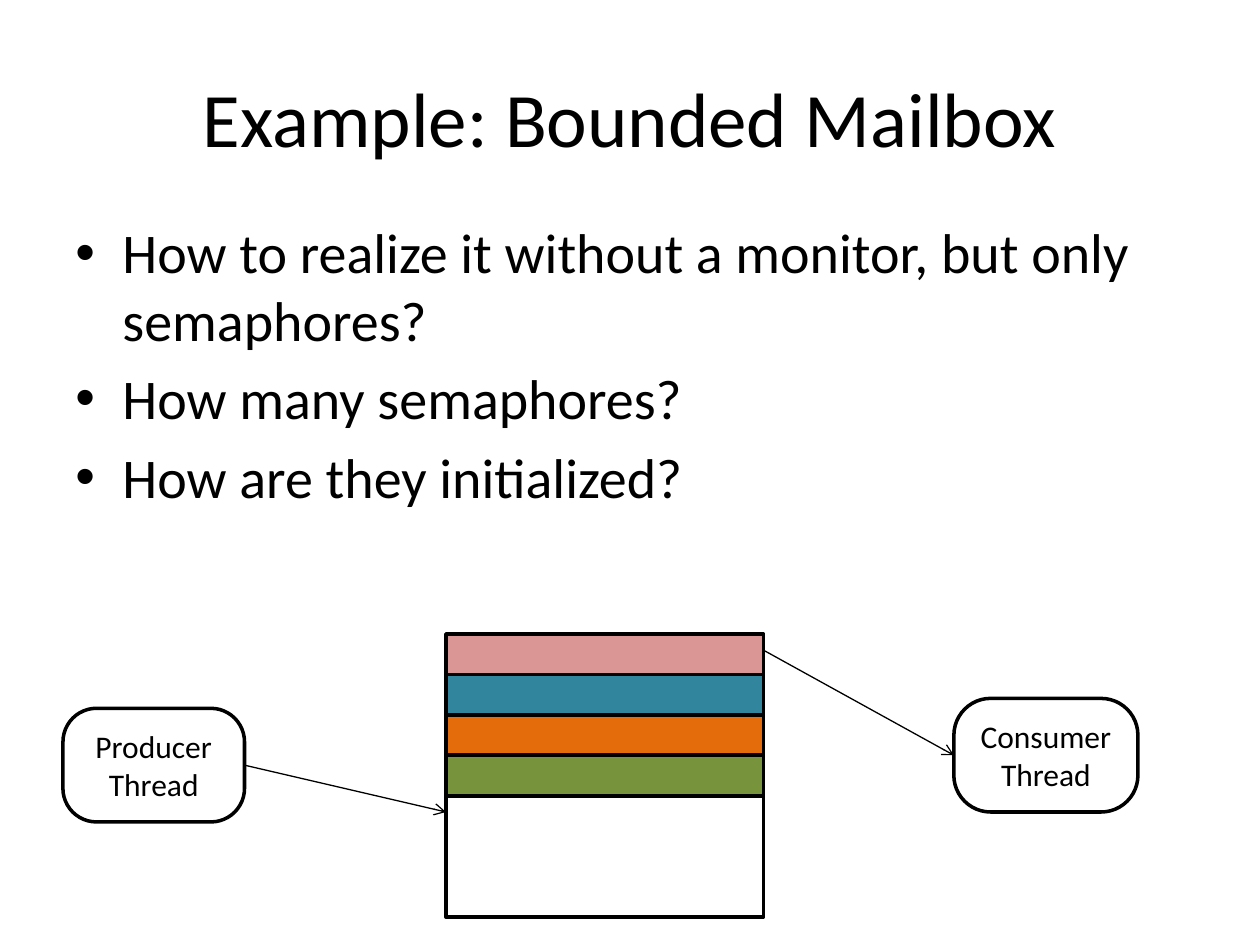
from lxml.etree import SubElement
from pptx import Presentation
from pptx.dml.color import RGBColor
from pptx.enum.shapes import MSO_CONNECTOR as Line, MSO_SHAPE as Kind
from pptx.enum.text import MSO_ANCHOR as Anchor, PP_ALIGN as Align
from pptx.oxml.ns import qn
from pptx.util import Cm, Pt

BLACK, WHITE = "000000", "FFFFFF"
SLOTS = ["D99694", "31859C", "E46C0A", "77933C"]


def color(code):
    return RGBColor.from_string(code)


def write(frame, *lines, size=18, align=Align.CENTER, anchor=Anchor.MIDDLE,
          bullet=None, before=0):
    frame.word_wrap = True
    frame.vertical_anchor = anchor
    for i, line in enumerate(lines):
        para = frame.add_paragraph() if i else frame.paragraphs[0]
        para.alignment = align
        para.space_before = Pt(before)
        run = para.add_run()
        run.text = line
        run.font.name = "Calibri"
        run.font.size = Pt(size)
        run.font.color.rgb = color(BLACK)
        if bullet:
            props = para._p.get_or_add_pPr()
            props.set("marL", str(Cm(0.95)))
            props.set("indent", str(-Cm(0.95)))
            SubElement(props, qn("a:buFont")).set("typeface", "Arial")
            SubElement(props, qn("a:buChar")).set("char", bullet)


def text(slide, box, *lines, **style):
    area = slide.shapes.add_textbox(*map(Cm, box))
    write(area.text_frame, *lines, **style)


def block(slide, box, fill=WHITE, kind=Kind.RECTANGLE):
    shape = slide.shapes.add_shape(kind, *map(Cm, box))
    shape.shadow.inherit = False
    shape.fill.solid()
    shape.fill.fore_color.rgb = color(fill)
    shape.line.color.rgb = color(BLACK)
    shape.line.width = Pt(2)
    return shape


def thread(slide, box, name, curve):
    shape = block(slide, box, kind=Kind.ROUNDED_RECTANGLE)
    shape.adjustments[0] = curve
    write(shape.text_frame, name)
    return shape


def mailbox(slide, box):
    """Stack the full slots above the free space; return the slot height."""
    left, top, width, height = box
    step = height / 7
    for i, fill in enumerate(SLOTS):
        block(slide, (left, top + i * step, width, step), fill)
    used = len(SLOTS) * step
    block(slide, (left, top + used, width, height - used))
    return step


def arrow(slide, start, end):
    link = slide.shapes.add_connector(Line.STRAIGHT, *map(Cm, start + end))
    link.line.color.rgb = color(BLACK)
    link.line.width = Pt(0.75)
    SubElement(link.line._get_or_add_ln(), qn("a:tailEnd")).set("type", "arrow")
    SubElement(link._element.spPr, qn("a:effectLst"))
    return link


def diagram(slide, box):
    left, top, width, height = box
    store = left + 7.72, top, 6.4, height
    step = mailbox(slide, store)
    maker = thread(slide, (left, top + 1.5, 3.66, 2.29), "Producer Thread", 0.295)
    taker = thread(slide, (left + width - 3.71, top + 1.3, 3.71, 2.29),
                   "Consumer Thread", 0.324)
    put = arrow(slide, (left + 3.66, top + 2.64), (store[0], top + 4.4 * step))
    put.begin_connect(maker, 3)
    get = arrow(slide, (store[0] + store[2], top + 0.4 * step),
                (left + width - 3.71, top + 2.44))
    get.end_connect(taker, 1)


def main():
    deck = Presentation()
    deck.slide_width, deck.slide_height = Cm(25.4), Cm(19.05)
    slide = deck.slides.add_slide(deck.slide_layouts[6])
    text(slide, (1.27, 0.76, 22.86, 3.18), "Example: Bounded Mailbox", size=44)
    text(slide, (1.27, 4.27, 22.86, 8.81),
         "How to realize it without a monitor, but only semaphores?",
         "How many semaphores?",
         "How are they initialized?",
         size=32, align=Align.LEFT, anchor=Anchor.TOP, bullet="•", before=6.4)
    diagram(slide, (1.27, 12.78, 21.67, 5.71))
    deck.save("out.pptx")


if __name__ == "__main__":
    main()
